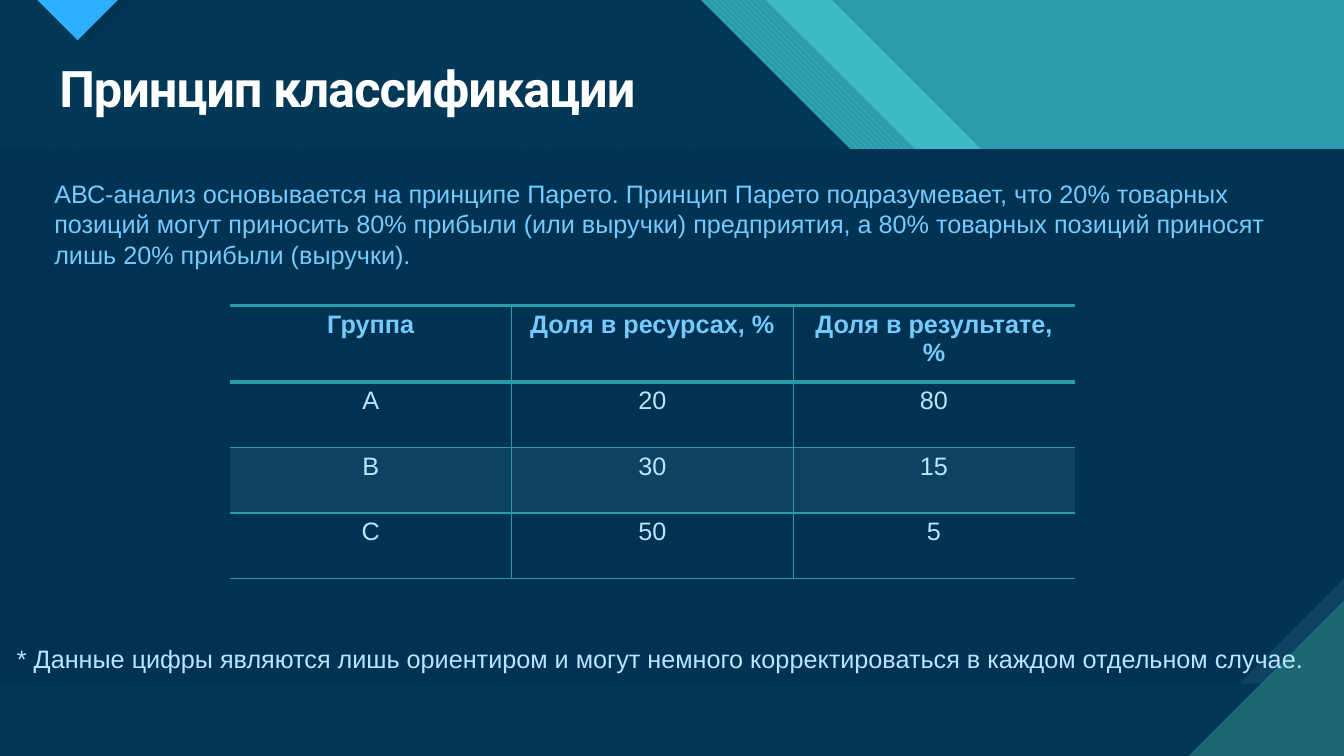
from lxml.etree import SubElement
from pptx import Presentation
from pptx.dml.color import RGBColor
from pptx.enum.dml import MSO_PATTERN as Pattern
from pptx.enum.text import MSO_ANCHOR as Anchor, PP_ALIGN as Align
from pptx.oxml.ns import qn
from pptx.util import Inches, Pt

COLORS = {
    "teal": "299CAB", "aqua": "47C3D3", "deep_teal": "1B6872", "navy": "003352",
    "slate": "0C4360", "blue": "2FAFFF", "sky": "75CAFF", "pale": "BAE4FF",
    "white": "FFFFFF",
}
WIDTH, HEIGHT = 13.33, 7.5
PANEL_TOP, PANEL_BOTTOM = 1.48, 6.78

TITLE = "Принцип классификации"
INTRO = ("АВС-анализ основывается на принципе Парето. Принцип Парето подразумевает, "
         "что 20% товарных позиций могут приносить 80% прибыли (или выручки) предприятия, "
         "а 80% товарных позиций приносят лишь 20% прибыли (выручки).")
FOOTNOTE = ("* Данные цифры являются лишь ориентиром и могут немного корректироваться "
            "в каждом отдельном случае.")
GROUPS = [
    ["Группа", "Доля в ресурсах, %", "Доля в результате, %"],
    ["А", "20", "80"],
    ["В", "30", "15"],
    ["С", "50", "5"],
]


def rgb(name):
    return RGBColor.from_string(COLORS[name])


def add_polygon(slide, points, color, alpha=None, pattern=None, back=None):
    corners = [(Inches(x), Inches(y)) for x, y in points]
    builder = slide.shapes.build_freeform(*corners[0], scale=1.0)
    builder.add_line_segments(corners[1:], close=True)
    polygon = builder.convert_to_shape()
    polygon.shadow.inherit = False
    polygon.line.fill.background()
    if pattern is not None:
        polygon.fill.patterned()
        polygon.fill.pattern = pattern
        polygon.fill.fore_color.rgb = rgb(color)
        polygon.fill.back_color.rgb = rgb(back)
    else:
        polygon.fill.solid()
        polygon.fill.fore_color.rgb = rgb(color)
    if alpha is not None:
        tint = polygon._element.spPr.find(qn("a:solidFill")).find(qn("a:srgbClr"))
        SubElement(tint, qn("a:alpha"), val=str(alpha * 1000))


def format_run(run, color, **formats):
    run.font.color.rgb = rgb(color)
    for name, value in formats.items():
        setattr(run.font, name, value)


def add_text(slide, box, text, color, **formats):
    frame = slide.shapes.add_textbox(*map(Inches, box)).text_frame
    frame.word_wrap = True
    paragraph = frame.paragraphs[0]
    run = paragraph.add_run()
    run.text = text
    format_run(run, color, **formats)
    return paragraph, run


def add_backdrop(slide, width, height):
    slide.background.fill.solid()
    slide.background.fill.fore_color.rgb = rgb("teal")

    # Slanted layers: each starts further left than the one beneath it
    slant = 2.97
    layers = [
        (8.25, dict(color="aqua", alpha=74)),
        (7.6, dict(color="aqua", back="teal", pattern=Pattern.WIDE_DOWNWARD_DIAGONAL)),
        (6.95, dict(color="aqua", back="deep_teal", pattern=Pattern.WIDE_UPWARD_DIAGONAL)),
        (6.95, dict(color="navy", alpha=90)),
    ]
    for edge, style in layers:
        outline = [(0, 0), (edge, 0), (edge + slant, slant), (width, slant),
                   (width, height), (0, height)]
        add_polygon(slide, outline, **style)

    # Pointer at the top edge, over its dark shade
    for left, size, color in [(0.48, 0.41, "navy"), (0.37, 0.4, "blue")]:
        add_polygon(slide, [(left, 0), (left + 2 * size, 0), (left + size, size)], color)

    # Content panel with a cut corner
    for cut, color in [(0, "slate"), (1.04, "navy")]:
        outline = [(0, PANEL_TOP), (width, PANEL_TOP), (width, PANEL_BOTTOM - cut),
                   (width - cut, PANEL_BOTTOM), (0, PANEL_BOTTOM)]
        add_polygon(slide, outline, color)

    # Bottom right corner
    corner = 1.54
    add_polygon(slide, [(width - corner, height), (width, height),
                        (width, height - corner)], "deep_teal")


def add_title(slide, box):
    paragraph, run = add_text(slide, box, TITLE, "white", name="Roboto",
                              size=Pt(36), bold=True)
    paragraph.line_spacing = 0.9
    run.font._element.set("spc", "-70")


def set_border(cell, side, points):
    border = SubElement(cell._tc.get_or_add_tcPr(), qn(f"a:ln{side}"),
                        w=str(int(Pt(points))))
    if points:
        fill = SubElement(border, qn("a:solidFill"))
        SubElement(fill, qn("a:srgbClr"), val=COLORS["teal"])
    else:
        SubElement(border, qn("a:noFill"))


def add_groups_table(slide, box):
    header_height = 0.76
    rows, columns = len(GROUPS), len(GROUPS[0])
    table = slide.shapes.add_table(rows, columns, *map(Inches, box)).table
    table.first_row = table.horz_banding = False
    for column in table.columns:
        column.width = Inches(box[2] / columns)
    for r, row in enumerate(table.rows):
        body_height = (box[3] - header_height) / (rows - 1)
        row.height = Inches(body_height if r else header_height)
        for c, cell in enumerate(row.cells):
            # Borders come before the fill in the cell properties
            widths = {"L": 1 if c else 0, "R": 1 if c < columns - 1 else 0,
                      "T": 3 if r < 2 else 1, "B": 1 if r else 3}
            for side, points in widths.items():
                set_border(cell, side, points)
            if r == 2:
                cell.fill.solid()
                cell.fill.fore_color.rgb = rgb("slate")
            else:
                cell.fill.background()
            cell.vertical_anchor = Anchor.TOP
            paragraph = cell.text_frame.paragraphs[0]
            paragraph.alignment = Align.CENTER
            run = paragraph.add_run()
            run.text = GROUPS[r][c]
            format_run(run, "pale" if r else "sky", name="Arial", size=Pt(18), bold=r == 0)


def main():
    deck = Presentation()
    deck.slide_width, deck.slide_height = Inches(WIDTH), Inches(HEIGHT)
    slide = deck.slides.add_slide(deck.slide_layouts[6])
    add_backdrop(slide, WIDTH, HEIGHT)
    add_title(slide, (0.49, 0.59, 12.26, 0.65))
    add_groups_table(slide, (2.28, 3.03, 8.38, 2.71))
    body = dict(name="Arial", size=Pt(18))
    add_text(slide, (0.07, 6.33, 13.33, 0.4), FOOTNOTE, "pale", **body)
    add_text(slide, (0.44, 1.72, 12.54, 1.01), INTRO, "sky", **body)
    deck.save("out.pptx")


if __name__ == "__main__":
    main()
